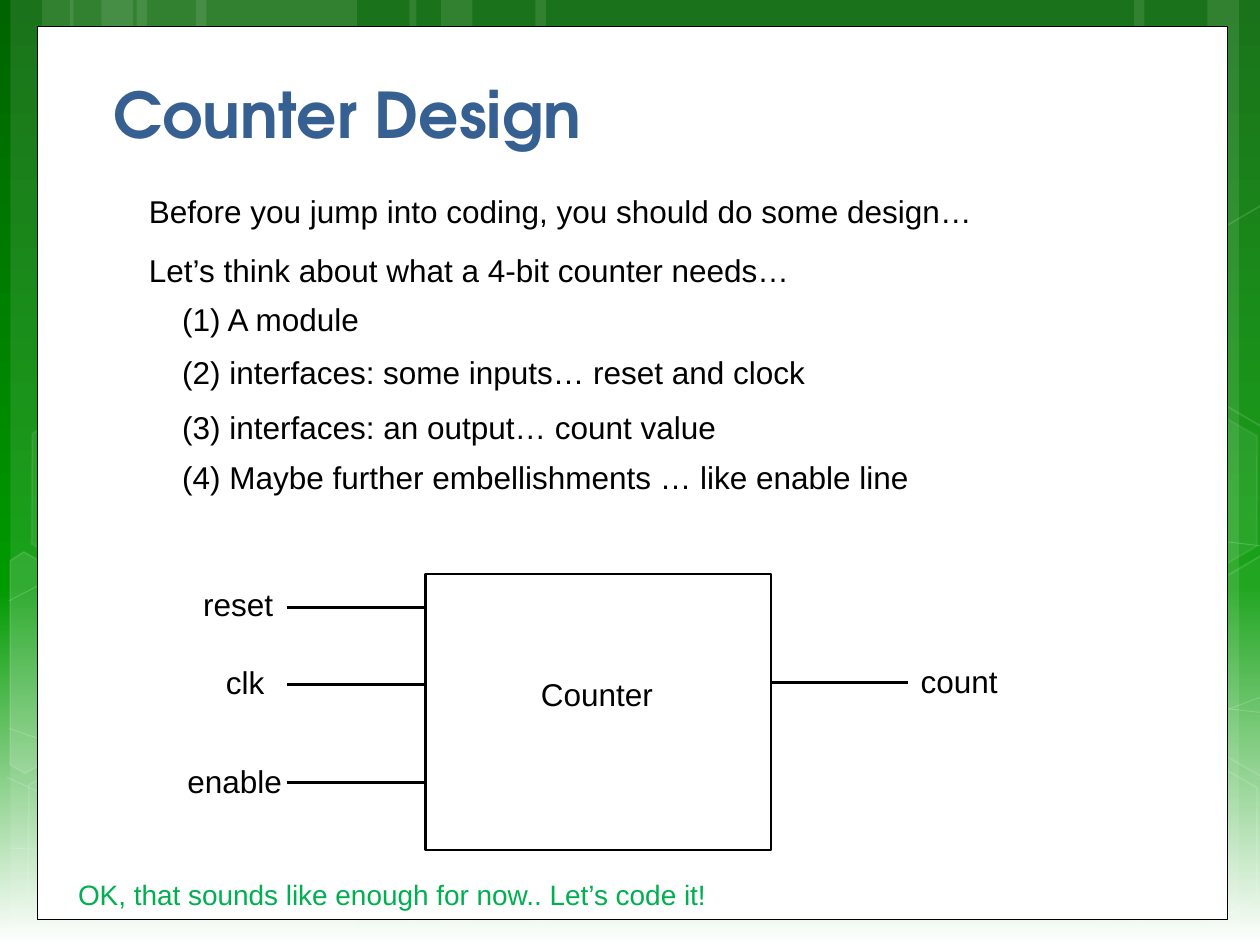
"""Build the Counter Design slide: a design list above a block diagram."""
from copy import deepcopy
from dataclasses import dataclass

from lxml.etree import SubElement
from pptx import Presentation
from pptx.dml.color import RGBColor as Rgb
from pptx.enum.shapes import MSO_CONNECTOR as Link, MSO_SHAPE as Kind
from pptx.enum.text import MSO_ANCHOR as Anchor, MSO_AUTO_SIZE as Fit, PP_ALIGN as Align
from pptx.oxml.ns import qn
from pptx.util import Pt


@dataclass(frozen=True)
class Theme:
    white: Rgb = Rgb(255, 255, 255)
    black: Rgb = Rgb(0, 0, 0)
    blue: Rgb = Rgb(0x37, 0x60, 0x92)
    green: Rgb = Rgb(0x00, 0xB0, 0x50)
    back: tuple = ((0, "006400"), (0.62, "009900"), (1, "FFFFFF"))
    head: str = "TeX Gyre Adventor"
    body: str = "Arial"
    big: int = 36
    mid: int = 18
    small: int = 16


THEME = Theme()
WIDE, HIGH = 720, 540
BARS = ((78, 126), (6, 36), (24, 60), (112, 126), (40, 36), (58, 60),
        (528, 126), (690, 36), (648, 60), (306, 222), (234, 36), (252, 60))
HEXES = ((8, 425.5, 0, 12), (10, 224.6, 7, 8), (600.5, 427, 0, 12), (600.5, 226, 7, 8))
CUTS = (
    (((5.8, 320.4), (13.7, 315.4), (69, 347), (68.4, 410.4), (14.4, 442), (5.8, 437)), 10),
    (((666.7, 349.2), (720.7, 317.5), (726.5, 321), (726.5, 441.4), (721.4, 444.2), (666.7, 412.6)), 4),
    (((666.7, 149), (720.7, 117.4), (727, 121), (726.5, 241.2), (721.4, 244), (666.7, 212.4)), 0),
)
WISPS = ((5, 484.6, 22, 485.4), (5, 343.4, 22, 334.6), (4, 444.2, 22, 452.4),
         (5, 416.2, 22, 422), (701, 405.6, 725, 396.7), (701, 309.6, 725, 312.5),
         (701, 405, 724, 407.5))
NOTES = (
    (78, 106, 486, "Before you jump into coding, you should do some design…"),
    (78, 140, 381, "Let’s think about what a 4-bit counter needs…"),
    (97, 168, 117, "(1) A module"),
    (97, 198, 374, "(2) interfaces: some inputs… reset and clock"),
    (97, 229.5, 323, "(3) interfaces: an output… count value"),
    (97, 258, 433, "(4) Maybe further embellishments … like enable line"),
)
PINS = (
    (109, 330.5, 55, "reset", 164, 243, 347),
    (122, 375.5, 37, "clk", 164, 243, 391),
    (100, 432, 69, "enable", 164, 243, 447),
    (519, 375, 59, "count", 440, 519, 390),
)


def fade(node, rate):
    """Set the opacity in percent of the colour inside an XML node."""
    tint = node.find(".//" + qn("a:srgbClr"))
    SubElement(tint, qn("a:alpha")).set("val", str(rate * 1000))


def paint(shape, fill=100, edge=None, width=0.5, rate=100):
    """Fill a shape white and outline it, each at its opacity."""
    shape.shadow.inherit = False
    props = shape._element.spPr
    if fill:
        shape.fill.solid()
        shape.fill.fore_color.rgb = THEME.white
        fade(props.find(qn("a:solidFill")), fill)
    else:
        shape.fill.background()
    if edge is None:
        shape.line.fill.background()
    else:
        shape.line.color.rgb = edge
        shape.line.width = Pt(width)
        fade(props.find(qn("a:ln")), rate)


def add_box(slide, left, top, width, height, kind=Kind.RECTANGLE):
    """Add a preset shape placed in points."""
    return slide.shapes.add_shape(kind, Pt(left), Pt(top), Pt(width), Pt(height))


def add_hex(slide, left, top, fill, rate):
    """Add a tilted, nearly clear hexagon."""
    shape = add_box(slide, left, top, 126, 109.4, Kind.HEXAGON)
    shape.adjustments[0], shape.adjustments[1] = 0.285, 1.155
    shape.rotation = 30
    paint(shape, fill, THEME.white, 1, rate)


def add_cut(slide, spots, fill):
    """Add a hexagon cut off by the slide edge."""
    first, *rest = [(Pt(x), Pt(y)) for x, y in spots]
    pen = slide.shapes.build_freeform(*first, scale=1.0)
    pen.add_line_segments(rest, close=True)
    paint(pen.convert_to_shape(), fill, THEME.white, 1, 12)


def add_line(slide, ends, color, width, rate=100):
    """Draw a straight line between two points."""
    line = slide.shapes.add_connector(Link.STRAIGHT, *map(Pt, ends))
    line.line.color.rgb = color
    line.line.width = Pt(width)
    props = line._element.spPr
    fade(props.find(qn("a:ln")), rate)
    SubElement(props, qn("a:effectLst"))


def style(para, size, color, name, bold=False):
    """Format all runs of a paragraph."""
    for run in para.runs:
        font = run.font
        font.size, font.name, font.bold = Pt(size), name, bold
        font.color.rgb = color


def add_text(slide, left, top, width, words, size=THEME.mid, color=THEME.black):
    """Add a one-line text box."""
    box = slide.shapes.add_textbox(Pt(left), Pt(top), Pt(width), Pt(size * 1.2 + 7.2))
    frame = box.text_frame
    frame.text = words
    frame.word_wrap = False
    frame.auto_size = Fit.SHAPE_TO_FIT_TEXT
    style(frame.paragraphs[0], size, color, THEME.body)


def set_back(slide):
    """Give the slide its vertical gradient."""
    fill = slide.background.fill
    fill.gradient()
    fill.gradient_angle = 270
    stops = slide._element.find(".//" + qn("a:gsLst"))
    stops.append(deepcopy(stops[-1]))
    for stop, (place, tint) in zip(fill.gradient_stops, THEME.back):
        stop.position = place
        stop.color.rgb = Rgb.from_string(tint)


def add_decor(slide):
    """Lay the bars, hexagons and wisps under the white panel."""
    for left, width in BARS:
        paint(add_box(slide, left, 0, width, HIGH), 10)
    for ends in WISPS:
        add_line(slide, ends, THEME.white, 0.5, 20)
    for item in HEXES:
        add_hex(slide, *item)
    for spots, fill in CUTS:
        add_cut(slide, spots, fill)
    paint(add_box(slide, 21.6, 15, 680, 510.5), edge=THEME.black)


def set_title(slide, words):
    """Place the title above the panel and format it."""
    title = slide.shapes.title
    slide.shapes._spTree.append(title._element)
    title.left, title.top, title.width, title.height = map(Pt, (57.6, 35.3, 606, 54.7))
    frame = title.text_frame
    frame.text = words
    frame.vertical_anchor = Anchor.BOTTOM
    para = frame.paragraphs[0]
    para.alignment = Align.LEFT
    style(para, THEME.big, THEME.blue, THEME.head, True)


def add_block(slide):
    """Draw the counter block with its labelled pins."""
    paint(add_box(slide, 243, 328, 197.5, 157.7), edge=THEME.black, width=1.5)
    for left, top, width, words, start, end, level in PINS:
        add_line(slide, (start, level, end, level), THEME.black, 1.5)
        add_text(slide, left, top, width, words)
    add_text(slide, 302, 382, 79, "Counter")


def main():
    """Build and save the slide."""
    deck = Presentation()
    deck.slide_width, deck.slide_height = Pt(WIDE), Pt(HIGH)
    slide = deck.slides.add_slide(deck.slide_layouts[5])
    set_back(slide)
    add_decor(slide)
    set_title(slide, "Counter Design")
    for note in NOTES:
        add_text(slide, *note)
    add_block(slide)
    add_text(slide, 37.5, 498, 375, "OK, that sounds like enough for now.. Let’s code it!",
             THEME.small, THEME.green)
    deck.save("out.pptx")


if __name__ == "__main__":
    main()
